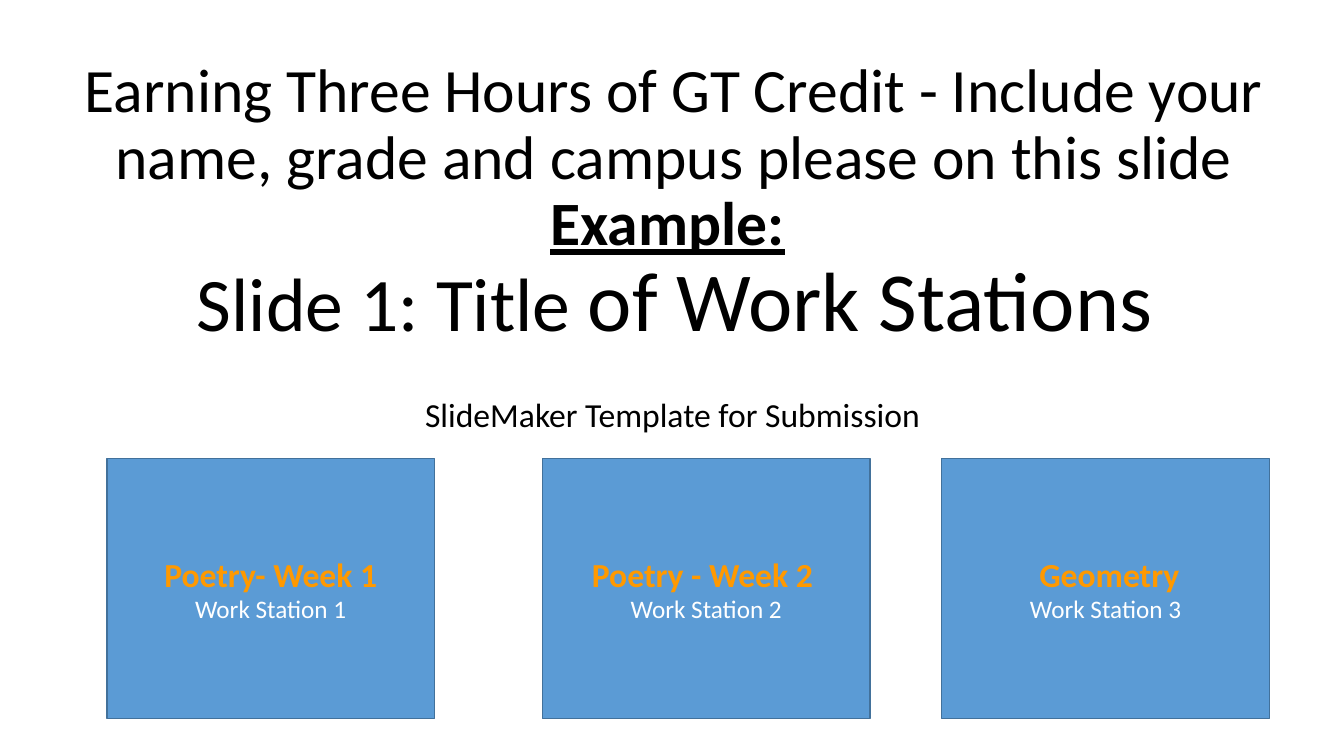
"""Build the title slide of a work station template with three station cards."""
import pptx
import pptx.dml.color
import pptx.enum.shapes
import pptx.enum.text
import pptx.util

PX = 9144
CENTER = pptx.enum.text.PP_ALIGN.CENTER
ANCHOR = pptx.enum.text.MSO_ANCHOR


def color(hex_string):
    return pptx.dml.color.RGBColor.from_string(hex_string)


def add_run(paragraph, text, size, hex_string="000000", bold=False, underline=False):
    paragraph.alignment = CENTER
    run = paragraph.add_run()
    run.text = text
    run.font.name = "Calibri"
    run.font.size = pptx.util.Pt(size)
    run.font.color.rgb = color(hex_string)
    run.font.bold = bold
    run.font.underline = underline


deck = pptx.Presentation()
deck.slide_width, deck.slide_height = 1333 * PX, 750 * PX
slide = deck.slides.add_slide(deck.slide_layouts[5])

title = slide.shapes.title
title.left, title.top, title.width, title.height = 16 * PX, 0, 1306 * PX, 352 * PX
heading = title.text_frame
heading.word_wrap = True
heading.auto_size = pptx.enum.text.MSO_AUTO_SIZE.NONE
heading.vertical_anchor = ANCHOR.BOTTOM
instruction = heading.paragraphs[0]
add_run(instruction, "Earning Three Hours of GT Credit - Include your name, grade and campus please on this slide", 44)
example = heading.add_paragraph()
add_run(example, "Example:", 44, bold=True, underline=True)
add_run(example, " ", 44)
example.add_line_break()
add_run(example, "Slide 1: Title ", 54)
add_run(example, "of Work Stations", 60)
for paragraph in heading.paragraphs:
    paragraph.line_spacing = 0.9

subtitle = slide.shapes.add_textbox(167 * PX, 394 * PX, 1000 * PX, 44 * PX).text_frame
subtitle.word_wrap = True
subtitle.paragraphs[0].line_spacing = 0.8
add_run(subtitle.paragraphs[0], "SlideMaker Template for Submission", 24)

stations = [(106, "Poetry- Week 1"), (538, "Poetry - Week 2 "), (934, " Geometry")]
for number, (left, topic) in enumerate(stations, start=1):
    card = slide.shapes.add_shape(
        pptx.enum.shapes.MSO_SHAPE.RECTANGLE, left * PX, 455 * PX, 325 * PX, 258 * PX)
    card.shadow.inherit = False
    card.fill.solid()
    card.fill.fore_color.rgb = color("5B9BD5")
    card.line.color.rgb = color("42719B")
    card.line.width = pptx.util.Pt(1)
    label = card.text_frame
    label.word_wrap = True
    label.vertical_anchor = ANCHOR.MIDDLE
    add_run(label.paragraphs[0], topic, 24, "FF9900", bold=True)
    add_run(label.add_paragraph(), f"Work Station {number}", 18, "FFFFFF")

deck.save("out.pptx")
